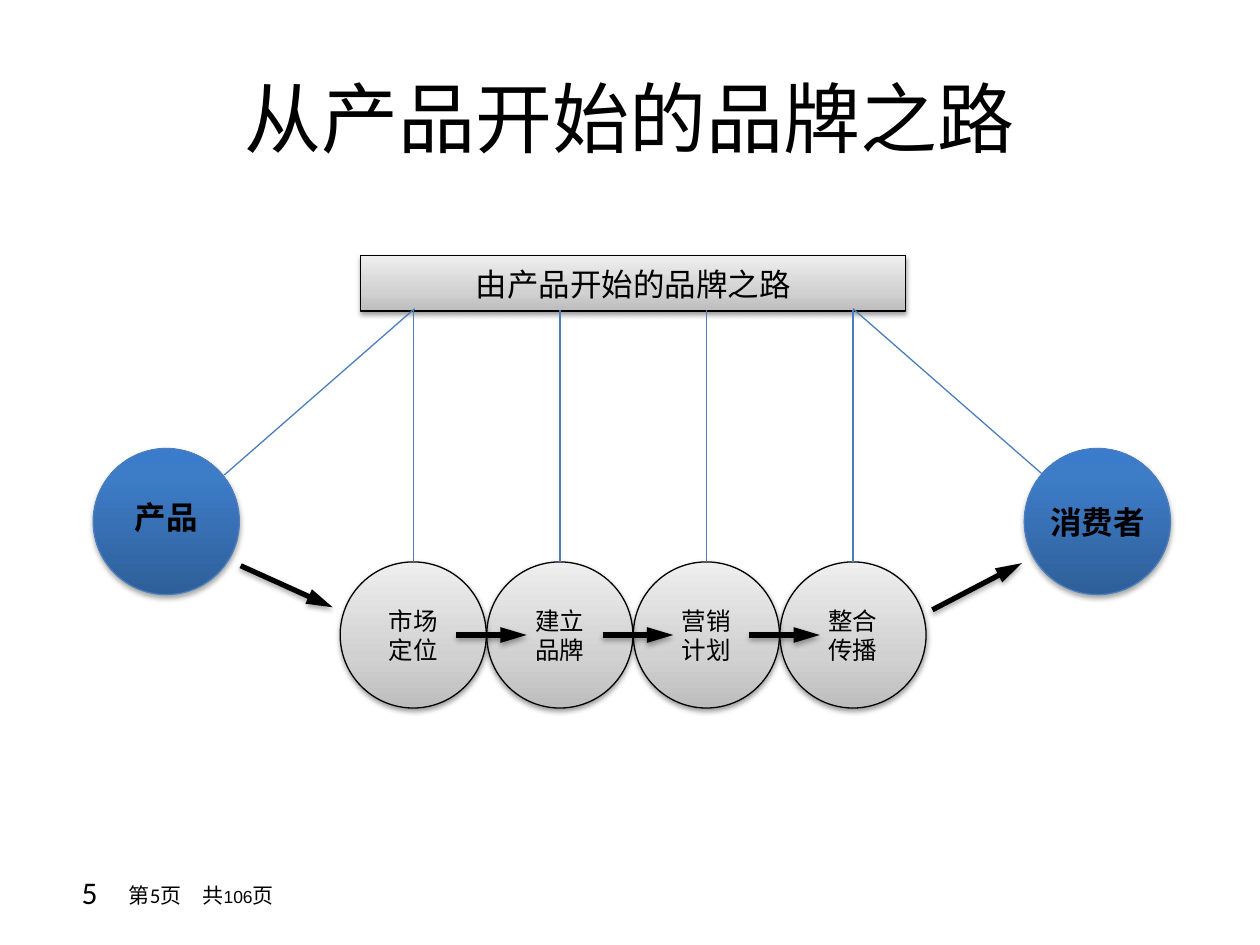
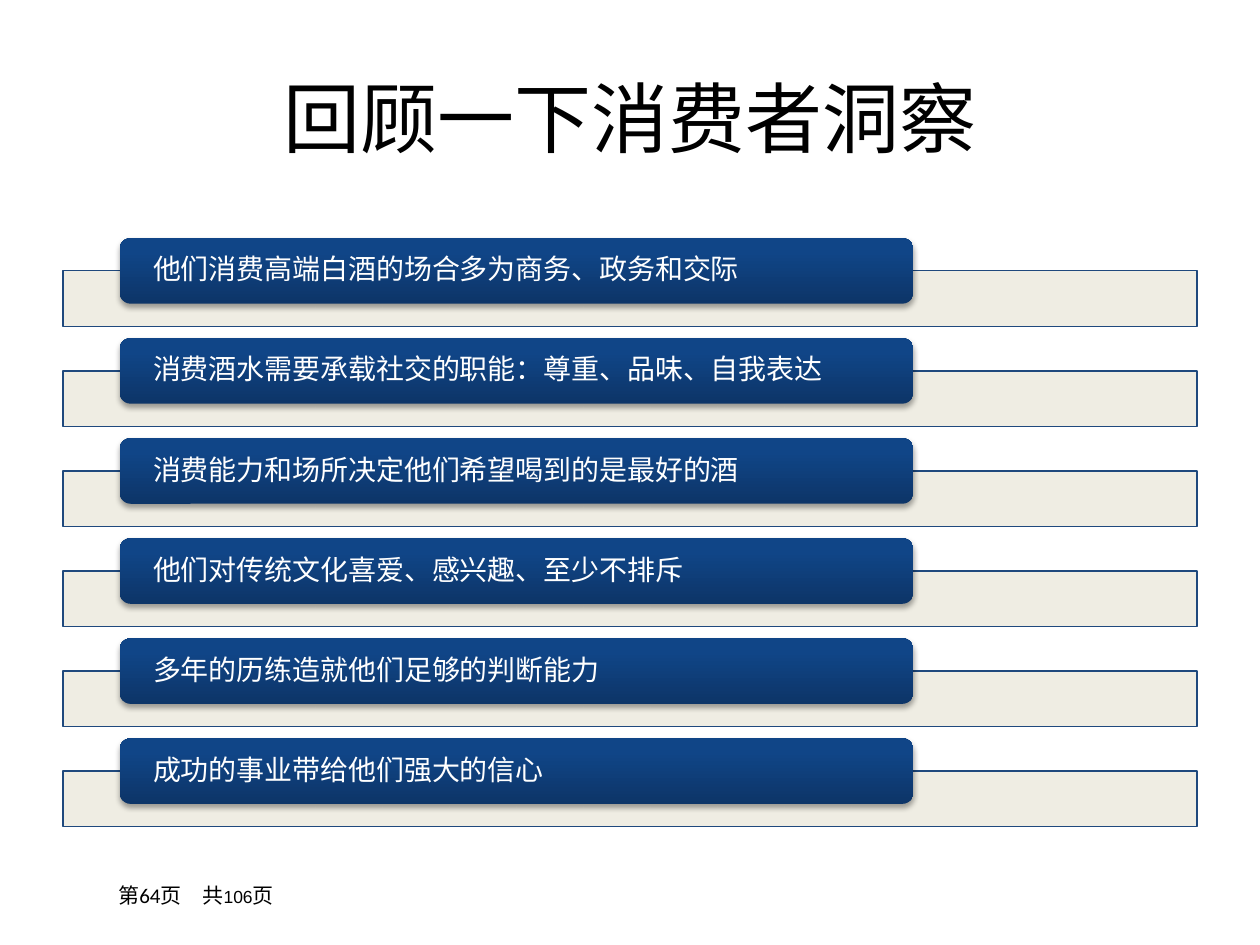
from lxml import etree
from pptx import Presentation
from pptx.dml.color import RGBColor
from pptx.enum.shapes import MSO_CONNECTOR, MSO_SHAPE
from pptx.enum.text import MSO_ANCHOR, PP_ALIGN
from pptx.oxml.ns import qn
from pptx.util import Inches, Pt

STRAIGHT = MSO_CONNECTOR.STRAIGHT
OVAL, RECT, ROUNDED = MSO_SHAPE.OVAL, MSO_SHAPE.RECTANGLE, MSO_SHAPE.ROUNDED_RECTANGLE
LEFT, CENTER, RIGHT = PP_ALIGN.LEFT, PP_ALIGN.CENTER, PP_ALIGN.RIGHT
TOP, MIDDLE = MSO_ANCHOR.TOP, MSO_ANCHOR.MIDDLE

ROAD_TITLE = "从产品开始的品牌之路"
ROAD_PAGE = 5
ROAD_BANNER = "由产品开始的品牌之路"
ROAD_STEPS = ["市场\n定位", "建立\n品牌", "营销\n计划", "整合\n传播"]
ROAD_START, ROAD_END = "产品", "消费者"

INSIGHT_TITLE = "回顾一下消费者洞察"
INSIGHT_PAGE = 64
INSIGHTS = [
    "他们消费高端白酒的场合多为商务、政务和交际",
    "消费酒水需要承载社交的职能：尊重、品味、自我表达",
    "消费能力和场所决定他们希望喝到的是最好的酒",
    "他们对传统文化喜爱、感兴趣、至少不排斥",
    "多年的历练造就他们足够的判断能力",
    "成功的事业带给他们强大的信心",
]
PAGE_COUNT = 106

BLACK, WHITE = "000000", "FFFFFF"
LINK_BLUE, BAND_LINE, BAND_FILL = "4B7EBC", "1F497D", "EEECE1"
GRAY = [(0, "BDBDBD"), (35, "D1D1D1"), (100, "EEEEEE")]
BLUE = [(0, "2F5F99"), (80, "3D7CC7"), (100, "3A7CCB")]
NAVY = [(0, "0D3568"), (80, "104587"), (100, "0E458A")]
GRAY_SHADOW, BLUE_SHADOW = (38, 1.6), (35, 1.8)
BODY, CJK, SANS = "Calibri", "Noto Sans CJK SC", "Arial"

DIAMETER = 1.16
FIRST_STEP_X, LAST_STEP_X, STEP_Y = 2.7, 6.19, 4.46
STEP_PITCH = (LAST_STEP_X - FIRST_STEP_X) / (len(ROAD_STEPS) - 1)
END_Y, START_X, END_X = 3.56, 0.74, 8.13
BANNER_BOTTOM = 2.46
FIRST_BAR_Y, LAST_BAR_Y = 1.89, 5.86
BAR_PITCH = (LAST_BAR_Y - FIRST_BAR_Y) / (len(INSIGHTS) - 1)


def rgb(color):
    return RGBColor.from_string(color)


def add_color(parent, color, alpha=100):
    element = etree.SubElement(parent, qn("a:srgbClr"), val=color)
    if alpha < 100:
        etree.SubElement(element, qn("a:alpha"), val=str(alpha * 1000))


def add_shadow(effects, alpha, distance):
    shadow = etree.SubElement(
        effects, qn("a:outerShdw"), blurRad=str(Pt(3.1)), dist=str(Pt(distance)),
        dir="5400000", rotWithShape="0")
    add_color(shadow, BLACK, alpha)


def fill_gradient(shape, stops):
    gradient = etree.Element(qn("a:gradFill"), rotWithShape="1")
    stop_list = etree.SubElement(gradient, qn("a:gsLst"))
    for position, color in stops:
        add_color(etree.SubElement(stop_list, qn("a:gs"), pos=str(position * 1000)), color)
    etree.SubElement(gradient, qn("a:lin"), ang="16200000", scaled="0")
    shape._element.spPr.find(qn("a:prstGeom")).addnext(gradient)


def style_run(run, size, font=BODY, color=BLACK, bold=False):
    run.font.size, run.font.name, run.font.bold = Pt(size), font, bold
    run.font.color.rgb = rgb(color)
    latin = run.font._element.find(qn("a:latin"))
    latin.addnext(etree.Element(qn("a:ea"), typeface=CJK))


def write(shape, text, size, align=CENTER, anchor=MIDDLE, insets=(0, 0, 0, 0), spacing=1.0, **style):
    frame = shape.text_frame
    frame.text, frame.word_wrap, frame.vertical_anchor = text, True, anchor
    frame.margin_left, frame.margin_top, frame.margin_right, frame.margin_bottom = map(Inches, insets)
    for paragraph in frame.paragraphs:
        paragraph.alignment, paragraph.line_spacing = align, spacing
        for run in paragraph.runs:
            style_run(run, size, **style)


def add_box(slide, left, top, width, height):
    return slide.shapes.add_textbox(*map(Inches, (left, top, width, height)))


def add_panel(slide, kind, left, top, width, height, stops=None, line=None, shadow=None):
    panel = slide.shapes.add_shape(kind, *map(Inches, (left, top, width, height)))
    panel.shadow.inherit = False
    if stops:
        fill_gradient(panel, stops)
    if line:
        panel.line.color.rgb, panel.line.width = rgb(line), Pt(0.75)
    else:
        panel.line.fill.background()
    if shadow:
        add_shadow(panel._element.spPr.find(qn("a:effectLst")), *shadow)
    return panel


def add_line(slide, start, end, color=LINK_BLUE, width=0.75):
    line = slide.shapes.add_connector(STRAIGHT, *map(Inches, start + end))
    line.line.color.rgb, line.line.width = rgb(color), Pt(width)
    effects = etree.SubElement(line._element.spPr, qn("a:effectLst"))
    return line, effects


def add_arrow(slide, start, end):
    arrow, effects = add_line(slide, start, end, BLACK, 3)
    etree.SubElement(arrow.line._get_or_add_ln(), qn("a:tailEnd"), type="triangle", w="med", len="lg")
    add_shadow(effects, *BLUE_SHADOW)


def add_base_slide(deck, title, page):
    slide = deck.slides.add_slide(deck.slide_layouts[6])
    footer = add_box(slide, 0.39, 6.95, 1.88, 0.31)
    write(footer, f"第{page}页　共", 12, RIGHT, insets=(0.1, 0.05, 0.1, 0.05))
    for text, size, font in [(str(PAGE_COUNT), 10, SANS), ("页", 12, BODY)]:
        run = footer.text_frame.paragraphs[0].add_run()
        run.text = text
        style_run(run, size, font)
    write(add_box(slide, 0.5, 0.3, 9, 1.25), title, 44)
    return slide


def build_road(deck):
    slide = add_base_slide(deck, ROAD_TITLE, ROAD_PAGE)
    banner = add_panel(slide, RECT, 2.86, 2.03, 4.33, 0.44, GRAY, BLACK, GRAY_SHADOW)
    write(banner, ROAD_BANNER, 18, font=CJK)

    for index in reversed(range(len(ROAD_STEPS))):
        left = FIRST_STEP_X + index * STEP_PITCH
        center = left + DIAMETER / 2
        step = add_panel(slide, OVAL, left, STEP_Y, DIAMETER, DIAMETER, GRAY, BLACK, GRAY_SHADOW)
        write(step, ROAD_STEPS[index], 14, font=CJK)
        link, _ = add_line(slide, (center, STEP_Y), (center, BANNER_BOTTOM))
        link.begin_connect(step, 0)
        if index < len(ROAD_STEPS) - 1:
            arrow_y = STEP_Y + DIAMETER / 2
            add_arrow(slide, (left + 0.92, arrow_y), (left + 1.48, arrow_y))

    ends = [
        (ROAD_START, START_X, 0.08, (1.78, 3.77), (3.29, 2.45)),
        (ROAD_END, END_X, 0, (8.28, 3.77), (6.77, 2.45)),
    ]
    for label, left, lift, link_start, link_end in ends:
        end = add_panel(slide, OVAL, left, END_Y, DIAMETER, DIAMETER, BLUE, LINK_BLUE, BLUE_SHADOW)
        write(end, label, 18, insets=(0, 0, 0, lift), font=CJK, bold=True)
        add_line(slide, link_start, link_end)
    add_arrow(slide, (1.91, 4.49), (2.64, 4.82))
    add_arrow(slide, (7.4, 4.84), (8.11, 4.47))
    write(add_box(slide, 0.55, 6.88, 2.33, 0.4), str(ROAD_PAGE), 18, LEFT, TOP,
          insets=(0.1, 0.05, 0.1, 0.05))


def build_insights(deck):
    slide = add_base_slide(deck, INSIGHT_TITLE, INSIGHT_PAGE)
    for index, insight in enumerate(INSIGHTS):
        top = FIRST_BAR_Y + index * BAR_PITCH
        band = add_panel(slide, RECT, 0.5, top + 0.26, 9, 0.44, line=BAND_LINE)
        band.fill.solid()
        band.fill.fore_color.rgb = rgb(BAND_FILL)
        band_color = band._element.spPr.find(qn("a:solidFill"))[0]
        etree.SubElement(band_color, qn("a:alpha"), val="90000")
        bar = add_panel(slide, ROUNDED, 0.95, top, 6.3, 0.52, NAVY, shadow=BLUE_SHADOW)
        write(bar, insight, 16, LEFT, insets=(0.24, 0, 0.24, 0), spacing=0.9, color=WHITE)


def main():
    deck = Presentation()
    deck.slide_width, deck.slide_height = Inches(10), Inches(7.5)
    build_road(deck)
    build_insights(deck)
    deck.save("out.pptx")


if __name__ == "__main__":
    main()
